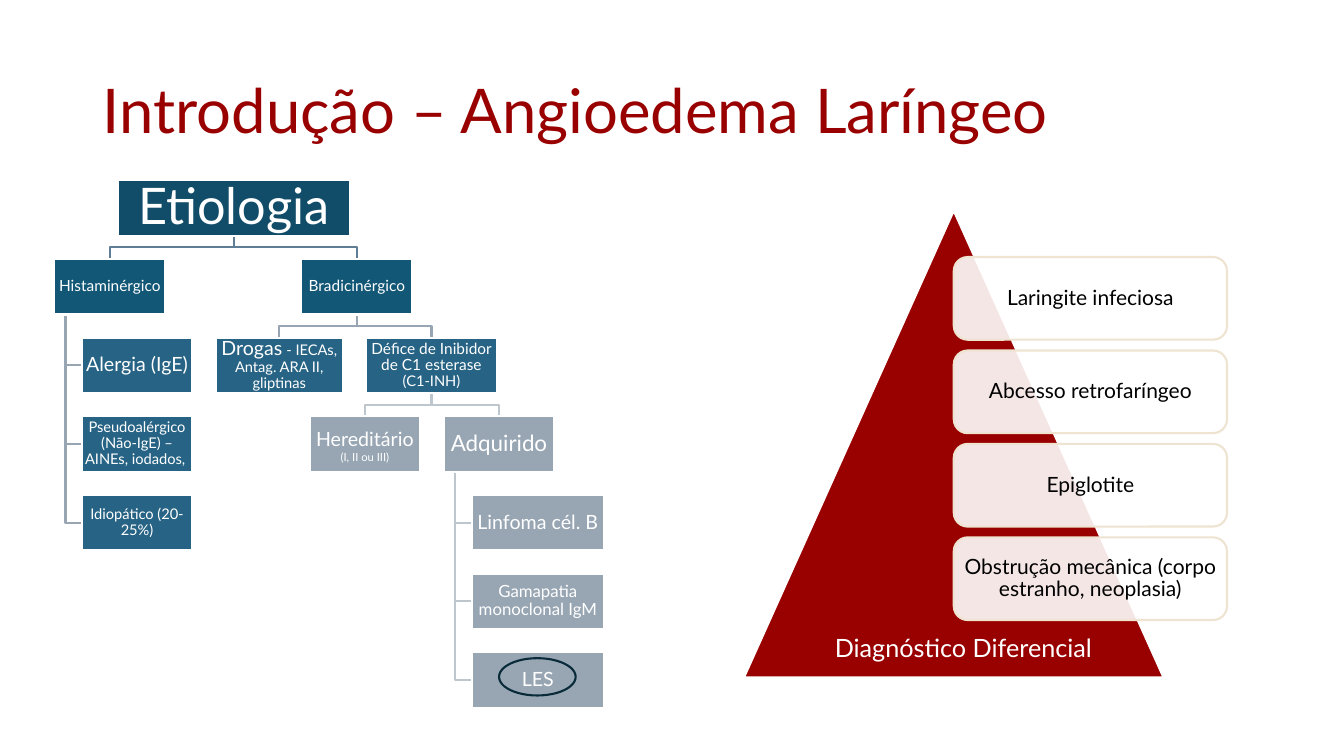
from dataclasses import dataclass

from lxml.etree import SubElement
from pptx import Presentation
from pptx.dml.color import RGBColor
from pptx.enum.shapes import MSO_SHAPE as Preset
from pptx.enum.text import MSO_ANCHOR as Anchor, PP_ALIGN as Align
from pptx.oxml.ns import qn
from pptx.util import Inches, Pt


@dataclass(frozen=True)
class Theme:
    font: str = "Lato"
    red: str = "990000"
    white: str = "FFFFFF"
    black: str = "000000"
    cream: str = "EEE4D1"
    ring: str = "092A39"
    root: str = "114D68"
    branch: str = "135776"
    cause: str = "276384"
    subtype: str = "98A6B4"
    link_root: str = "5F7D95"
    link_branch: str = "98A6B4"
    link_subtype: str = "BDC5CD"
    title_size: float = 44
    caption_size: float = 18
    card_size: float = 15
    line_width: float = 1.5


THEME = Theme()


@dataclass(frozen=True)
class Node:
    left: float
    row: int
    width: float
    fill: str
    runs: tuple

    @property
    def top(self):
        return FIRST_ROW + self.row * ROW_PITCH

    @property
    def bottom(self):
        return self.top + NODE_HEIGHT

    @property
    def center(self):
        return self.left + self.width / 2


FIRST_ROW, ROW_PITCH, NODE_HEIGHT = 1.79, 0.78, 0.55
HANG_INSET = 0.11

NODES = {
    "etiologia": Node(1.17, 0, 2.3, THEME.root, (("Etiologia", 36),)),
    "histamina": Node(0.54, 1, 1.1, THEME.branch, (("Histaminérgico", 11),)),
    "alergia": Node(0.81, 2, 1.1, THEME.cause, (("Alergia (IgE)", 14),)),
    "pseudo": Node(0.81, 3, 1.1, THEME.cause,
                   (("Pseudoalérgico (Não-IgE) – AINEs, iodados, ", 10.5),)),
    "idiopatico": Node(0.81, 4, 1.1, THEME.cause, (("Idiopático (20-25%)", 10.5),)),
    "bradicinina": Node(2.99, 1, 1.1, THEME.branch, (("Bradicinérgico", 11),)),
    "drogas": Node(2.14, 2, 1.26, THEME.cause,
                   (("Drogas", 14), (" ", 11), ("- IECAs, Antag. ARA II, gliptinas", 10.5))),
    "defice": Node(3.63, 2, 1.3, THEME.cause,
                   (("Défice de Inibidor de C1 esterase ", 11), ("(C1-INH)", 10.5))),
    "hereditario": Node(3.07, 3, 1.1, THEME.subtype,
                        (("Hereditário", 14), (" ", 18), ("(I, II ou III)", 8))),
    "adquirido": Node(4.4, 3, 1.1, THEME.subtype, (("Adquirido", 16),)),
    "linfoma": Node(4.68, 4, 1.31, THEME.subtype, (("Linfoma cél. B", 14),)),
    "gamapatia": Node(4.68, 5, 1.31, THEME.subtype, (("Gamapatia monoclonal IgM", 12),)),
    "les": Node(4.68, 6, 1.31, THEME.subtype, (("LES", 14),)),
}

# Parent, children, whether the children hang at its side, link colour
BRANCHES = [
    ("adquirido", ("les", "gamapatia", "linfoma"), True, THEME.link_subtype),
    ("defice", ("adquirido", "hereditario"), False, THEME.link_subtype),
    ("bradicinina", ("defice", "drogas"), False, THEME.link_branch),
    ("histamina", ("idiopatico", "pseudo", "alergia"), True, THEME.link_branch),
    ("etiologia", ("bradicinina", "histamina"), False, THEME.link_root),
]

DIFFERENTIALS = [
    "Laringite infeciosa",
    "Abcesso retrofaríngeo",
    "Epiglotite",
    "Obstrução mecânica (corpo estranho, neoplasia)",
]


def apply_format(target, values):
    for name, value in values.items():
        setattr(target, name, value)


def write(shape, runs, color, align=Align.CENTER, inset=None, spacing=0.9, anchor=Anchor.MIDDLE):
    frame = shape.text_frame
    apply_format(frame, {"word_wrap": True, "vertical_anchor": anchor})
    if inset is not None:
        sides = ("left", "right", "top", "bottom")
        apply_format(frame, {f"margin_{side}": Inches(inset) for side in sides})
    paragraph = frame.paragraphs[0]
    apply_format(paragraph, {"alignment": align, "line_spacing": spacing})
    for text, size in runs:
        run = paragraph.add_run()
        run.text = text
        apply_format(run.font, {"name": THEME.font, "size": Pt(size)})
        run.font.color.rgb = RGBColor.from_string(color)


def paint(shape, fill, line, opacity=None):
    shape.shadow.inherit = False
    if fill is None:
        shape.fill.background()
    else:
        shape.fill.solid()
        shape.fill.fore_color.rgb = RGBColor.from_string(fill)
    if opacity is not None:
        tint = shape.fill._xPr.find(qn("a:solidFill")).find(qn("a:srgbClr"))
        SubElement(tint, qn("a:alpha"), val=str(opacity * 1000))
    shape.line.color.rgb = RGBColor.from_string(line)
    shape.line.width = Pt(THEME.line_width)


def add_preset(slide, preset, box, fill, line, opacity=None):
    shape = slide.shapes.add_shape(preset, *map(Inches, box))
    paint(shape, fill, line, opacity)
    return shape


def add_label(slide, box, text, size, color, **layout):
    label = slide.shapes.add_textbox(*map(Inches, box))
    write(label, [(text, size)], color, **layout)


def add_link(slide, parent, child, hangs, color):
    if hangs:
        trunk, level = parent.left + HANG_INSET, child.top + NODE_HEIGHT / 2
        points = [(trunk, parent.bottom), (trunk, level), (child.left, level)]
    else:
        level = (parent.bottom + child.top) / 2
        points = [(parent.center, parent.bottom), (parent.center, level),
                  (child.center, level), (child.center, child.top)]
    start, *corners = [(Inches(x), Inches(y)) for x, y in points]
    builder = slide.shapes.build_freeform(*start)
    builder.add_line_segments(corners, close=False)
    paint(builder.convert_to_shape(), None, color)


def add_etiology_tree(slide):
    for parent, children, hangs, color in BRANCHES:
        for child in children:
            add_link(slide, NODES[parent], NODES[child], hangs, color)
    for node in NODES.values():
        box = (node.left, node.top, node.width, NODE_HEIGHT)
        shape = add_preset(slide, Preset.RECTANGLE, box, node.fill, THEME.white)
        write(shape, node.runs, THEME.white, inset=0.03 if node.row == 0 else 0.01)


def add_differential_pyramid(slide):
    add_preset(slide, Preset.ISOSCELES_TRIANGLE, (7.38, 2.09, 4.16, 4.63),
               THEME.red, THEME.white)
    for index, diagnosis in enumerate(DIFFERENTIALS):
        box = (9.46, 2.55 + index * 0.927, 2.71, 0.82)
        card = add_preset(slide, Preset.ROUNDED_RECTANGLE, box,
                          THEME.white, THEME.cream, opacity=90)
        write(card, [(diagnosis, THEME.card_size)], THEME.black, inset=0.06)
    add_label(slide, (8.05, 6.22, 3.01, 0.4), "Diagnóstico Diferencial",
              THEME.caption_size, THEME.white, spacing=1.0, anchor=Anchor.TOP)


def main():
    deck = Presentation()
    apply_format(deck, {"slide_width": Inches(13.33), "slide_height": Inches(7.5)})
    slide = deck.slides.add_slide(deck.slide_layouts[6])

    # Title
    add_label(slide, (0.92, 0.4, 11.5, 1.45), "Introdução – Angioedema Laríngeo",
              THEME.title_size, THEME.red, align=Align.LEFT)

    # Causes on the left, differential diagnosis on the right
    add_etiology_tree(slide)
    add_differential_pyramid(slide)

    # Ring around LES
    add_preset(slide, Preset.OVAL, (4.95, 6.53, 0.76, 0.37), None, THEME.ring)

    deck.save("out.pptx")


if __name__ == "__main__":
    main()
